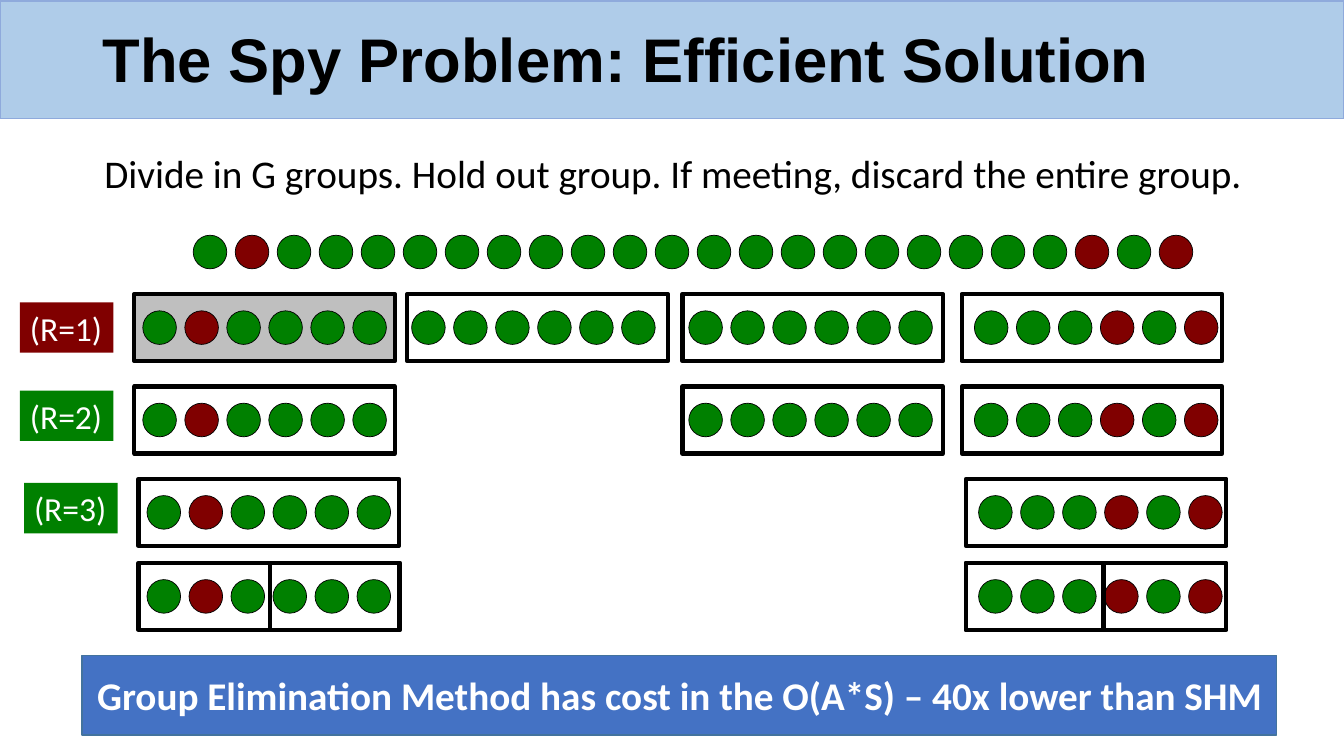
from dataclasses import dataclass

from pptx import Presentation
from pptx.dml.color import RGBColor
from pptx.enum.shapes import MSO_SHAPE
from pptx.enum.text import MSO_ANCHOR, MSO_AUTO_SIZE, PP_ALIGN
from pptx.util import Emu, Pt


@dataclass(frozen=True)
class Theme:
    black: str = "000000"
    white: str = "FFFFFF"
    band: str = "AFCCE9"
    band_edge: str = "8FAADC"
    banner: str = "4472C4"
    banner_edge: str = "43739E"
    spy: str = "800000"
    loyal: str = "008000"
    held_out: str = "BFBFBF"
    heading_font: str = "Arial"
    body_font: str = "Calibri"
    title_size: int = 44
    body_size: int = 28
    label_size: int = 24


THEME = Theme()
EMU_PER_PX = 9525
PERSON_SIZE = 32
PERSON_PITCH = 40
GROUP_WIDTH = 248
GROUP_HEIGHT = 64
PEOPLE_INSET = 16

EVERYONE = "LS" + "L" * 19 + "SLS"
GROUPS = {
    "first": (128, 8, "LSLLLL"),
    "second": (388, 4, "LLLLLL"),
    "third": (650, 6, "LLLLLL"),
    "fourth": (916, 12, "LLLSLS"),
}
ROUNDS = [
    (280, 0, ("first", "second", "third", "fourth"), "first"),
    (368, 0, ("first", "third", "fourth"), None),
    (456, 4, ("first", "fourth"), None),
    (536, 4, ("first", "fourth"), None),
]
LABELS = [
    ("(R=1)", 19, 288, THEME.spy),
    ("(R=2)", 19, 372, THEME.loyal),
    ("(R=3)", 23, 460, THEME.loyal),
]
HALVES = [(257, 124), (920, 131)]


def px(length):
    return Emu(length * EMU_PER_PX)


def bounds(*lengths):
    return [px(length) for length in lengths]


def rgb(code):
    return RGBColor.from_string(code)


def add_block(shapes, box, fill=None, edge=None, weight=1, outline=MSO_SHAPE.RECTANGLE):
    block = shapes.add_shape(outline, *bounds(*box))
    block.shadow.inherit = False
    if fill:
        block.fill.solid()
        block.fill.fore_color.rgb = rgb(fill)
    else:
        block.fill.background()
    if edge:
        block.line.color.rgb = rgb(edge)
        block.line.width = Pt(weight)
    else:
        block.line.fill.background()
    return block


def write(holder, wording, size, color, font=THEME.body_font, bold=False, align=PP_ALIGN.LEFT):
    holder.text_frame.text = wording
    paragraph = holder.text_frame.paragraphs[0]
    paragraph.alignment = align
    letters = paragraph.runs[0].font
    letters.name = font
    letters.size = Pt(size)
    letters.bold = bold
    letters.color.rgb = rgb(color)
    return paragraph


def fit_to_line(holder):
    holder.text_frame.word_wrap = False
    holder.text_frame.auto_size = MSO_AUTO_SIZE.SHAPE_TO_FIT_TEXT


def add_people(shapes, left, top, roles):
    for position, role in enumerate(roles):
        box = (left + position * PERSON_PITCH, top, PERSON_SIZE, PERSON_SIZE)
        fill = THEME.spy if role == "S" else THEME.loyal
        add_block(shapes, box, fill, THEME.black, 0.5, MSO_SHAPE.OVAL)


def add_frame(shapes, left, top, width=GROUP_WIDTH, fill=None):
    add_block(shapes, (left, top, width, GROUP_HEIGHT), fill, THEME.black, 3)


def add_round(slide, top, shift, remaining, held_out):
    members = slide.shapes.add_group_shape().shapes
    for name in remaining:
        left, inset, roles = GROUPS[name]
        fill = THEME.held_out if name == held_out else None
        add_frame(members, left + shift, top, fill=fill)
        add_people(members, left + shift + inset, top + PEOPLE_INSET, roles)


def add_halves(slide, top):
    halves = slide.shapes.add_group_shape().shapes
    for left, width in HALVES:
        add_frame(halves, left, top, width)


def add_label(slide, wording, left, top, fill):
    label = add_block(slide.shapes, (left, top, 89, 48), fill)
    write(label, wording, THEME.label_size, THEME.white)
    fit_to_line(label)


def add_heading(slide):
    title = slide.shapes.title
    title.left, title.top, title.width, title.height = bounds(88, 22, 1104, 75)
    heading = write(title, "The Spy Problem: Efficient Solution", THEME.title_size,
                    THEME.black, THEME.heading_font, True)
    heading.line_spacing = 0.9
    title.text_frame.vertical_anchor = MSO_ANCHOR.MIDDLE
    title.text_frame.auto_size = MSO_AUTO_SIZE.NONE
    band = add_block(slide.shapes, (0, 1, 1280, 112), THEME.band, THEME.band_edge)
    title.element.addprevious(band.element)


def add_method(slide):
    method = slide.shapes.add_textbox(*bounds(90, 137, 1110, 55))
    write(method, "Divide in G groups. Hold out group. If meeting, discard the entire group.",
          THEME.body_size, THEME.black)
    fit_to_line(method)


def add_banner(slide):
    banner = add_block(slide.shapes, (78, 624, 1138, 76), THEME.banner, THEME.banner_edge)
    write(banner, "Group Elimination Method has cost in the O(A*S) – 40x lower than SHM",
          THEME.body_size, THEME.white, bold=True, align=PP_ALIGN.CENTER)
    banner.text_frame.vertical_anchor = MSO_ANCHOR.MIDDLE


def main():
    deck = Presentation()
    deck.slide_width, deck.slide_height = bounds(1280, 720)
    slide = deck.slides.add_slide(deck.slide_layouts.get_by_name("Title Only"))
    add_heading(slide)
    add_banner(slide)
    add_method(slide)
    add_people(slide.shapes, 184, 224, EVERYONE)
    for label in LABELS:
        add_label(slide, *label)
    for spy_round in ROUNDS:
        add_round(slide, *spy_round)
    add_halves(slide, ROUNDS[-1][0])
    deck.save("out.pptx")


if __name__ == "__main__":
    main()
